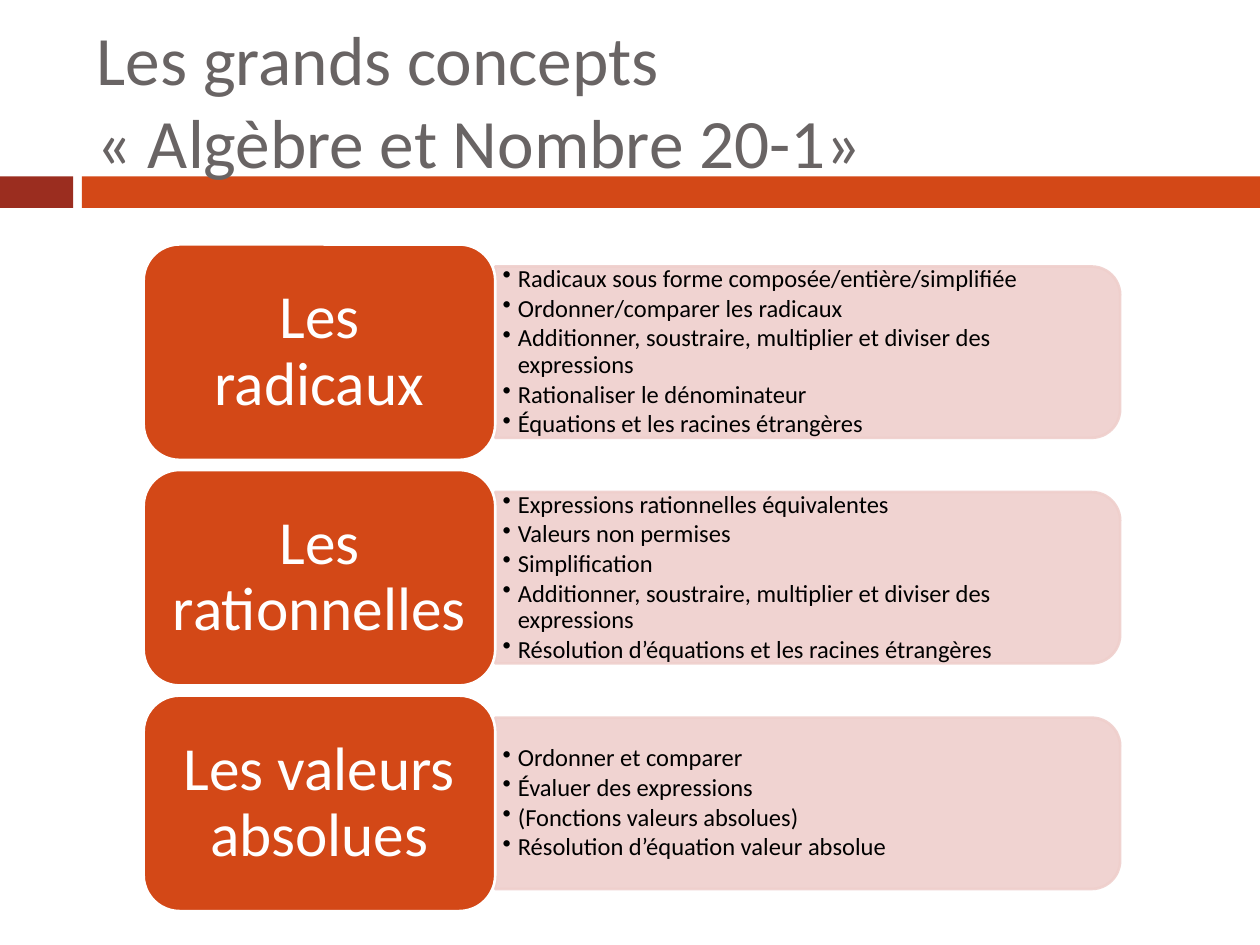
from typing import NamedTuple

from lxml import etree
from pptx import Presentation
from pptx.dml.color import RGBColor
from pptx.enum.shapes import MSO_SHAPE
from pptx.enum.text import MSO_ANCHOR, PP_ALIGN
from pptx.oxml.ns import qn
from pptx.util import Inches, Pt

RECT = MSO_SHAPE.RECTANGLE
ROUNDED = MSO_SHAPE.ROUNDED_RECTANGLE
ROUND_TOP = MSO_SHAPE.ROUND_2_SAME_RECTANGLE
MIDDLE = MSO_ANCHOR.MIDDLE
LEFT, CENTER = PP_ALIGN.LEFT, PP_ALIGN.CENTER

ORANGE = RGBColor(0xD3, 0x48, 0x17)
DARK_RED = RGBColor(0x9B, 0x2D, 0x1F)
PINK = RGBColor(0xEF, 0xCF, 0xCC)
GREY = RGBColor(0x69, 0x64, 0x64)
WHITE = RGBColor(0xFF, 0xFF, 0xFF)
BLACK = RGBColor(0, 0, 0)

FONT = "Calibri"
WIDTH, HEIGHT = Inches(10), Inches(7.5)

# Rows of the list, in percent of the slide's height
FIRST_MIDDLE, ROW_PITCH = 37.27, 23.87
LABEL_H, PANEL_H, BULLETS_H = 22.8, 18.13, 16.4


class Box(NamedTuple):
    """Left, top, width and height in percent of the slide."""
    x: float
    y: float
    w: float
    h: float

    def emu(self) -> tuple:
        return (int(WIDTH * self.x / 100), int(HEIGHT * self.y / 100),
                int(WIDTH * self.w / 100), int(HEIGHT * self.h / 100))


class Concept(NamedTuple):
    label: str
    points: list


CONCEPTS = [
    Concept("Les radicaux", [
        "Radicaux sous forme composée/entière/simplifiée",
        "Ordonner/comparer les radicaux",
        "Additionner, soustraire, multiplier et diviser des expressions",
        "Rationaliser le dénominateur",
        "Équations et les racines étrangères",
    ]),
    Concept("Les rationnelles", [
        "Expressions rationnelles équivalentes",
        "Valeurs non permises",
        "Simplification",
        "Additionner, soustraire, multiplier et diviser des expressions",
        "Résolution d’équations et les racines étrangères",
    ]),
    Concept("Les valeurs absolues", [
        "Ordonner et comparer",
        "Évaluer des expressions",
        "(Fonctions valeurs absolues)",
        "Résolution d’équation valeur absolue",
    ]),
]


def add_block(s, kind, box: Box, fill: RGBColor, line: RGBColor | None = None):
    sp = s.shapes.add_shape(kind, *box.emu())
    sp.shadow.inherit = False
    sp.fill.solid()
    sp.fill.fore_color.rgb = fill
    if line is None:
        sp.line.fill.background()
    else:
        sp.line.color.rgb = line
        sp.line.width = Pt(1.5)
    return sp


def set_text(sp, lines: list, size: float, color: RGBColor, align,
             spacing: float = 1.0, inset: tuple = (0.1, 0.05)) -> None:
    tf = sp.text_frame
    tf.word_wrap = True
    tf.vertical_anchor = MIDDLE
    tf.margin_left = tf.margin_right = Inches(inset[0])
    tf.margin_top = tf.margin_bottom = Inches(inset[1])
    tf.text = "\n".join(lines)
    for p in tf.paragraphs:
        p.alignment = align
        p.line_spacing = spacing
        p.font.name = FONT
        p.font.size = Pt(size)
        p.font.color.rgb = color


def add_bullets(sp) -> None:
    for p in sp.text_frame.paragraphs:
        p.space_after = Pt(1.8)
        props = p._p.get_or_add_pPr()
        props.set("marL", str(Inches(0.12)))
        props.set("indent", str(-Inches(0.12)))
        bullet = etree.Element(qn("a:buChar"), char="•")
        props.find(qn("a:defRPr")).addprevious(bullet)


def set_opacity(sp, percent: int) -> None:
    for color in sp._element.spPr.iter(qn("a:srgbClr")):
        etree.SubElement(color, qn("a:alpha"), val=str(percent * 1000))


def add_panel(s, middle: float) -> None:
    """Pink panel, turned so that its rounded side faces right."""
    sp = add_block(s, ROUND_TOP, Box(39.3, middle - PANEL_H / 2, 49.6, PANEL_H),
                   PINK, PINK)
    center_x, center_y = sp.left + sp.width // 2, sp.top + sp.height // 2
    sp.width, sp.height = sp.height, sp.width
    sp.left, sp.top = center_x - sp.width // 2, center_y - sp.height // 2
    sp.rotation = 90
    set_opacity(sp, 90)


def add_concept(s, concept: Concept, middle: float) -> None:
    add_panel(s, middle)
    bullets = s.shapes.add_textbox(
        *Box(39.3, middle - BULLETS_H / 2, 48.9, BULLETS_H).emu())
    set_text(bullets, concept.points, 14, BLACK, LEFT, 0.9, (0.06, 0.03))
    add_bullets(bullets)
    label = add_block(s, ROUNDED, Box(11.4, middle - LABEL_H / 2, 27.9, LABEL_H),
                      ORANGE, WHITE)
    # Narrow side insets keep the longest word on one line
    set_text(label, [concept.label], 35, WHITE, CENTER, 0.9, (0.13, 0.07))


def main() -> None:
    prs = Presentation()
    prs.slide_width, prs.slide_height = WIDTH, HEIGHT
    s = prs.slides.add_slide(prs.slide_layouts[6])

    # Band under the title
    add_block(s, RECT, Box(0, 18.67, 5.8, 3.33), DARK_RED)
    add_block(s, RECT, Box(6.5, 18.67, 93.5, 3.33), ORANGE)

    # Title
    title = s.shapes.add_textbox(*Box(6.7, 3.33, 89.2, 14.4).emu())
    set_text(title, ["Les grands concepts\v« Algèbre et Nombre 20-1»"],
             39.6, GREY, LEFT)

    # One row per concept
    for row, concept in enumerate(CONCEPTS):
        add_concept(s, concept, FIRST_MIDDLE + row * ROW_PITCH)

    prs.save("out.pptx")


if __name__ == "__main__":
    main()
